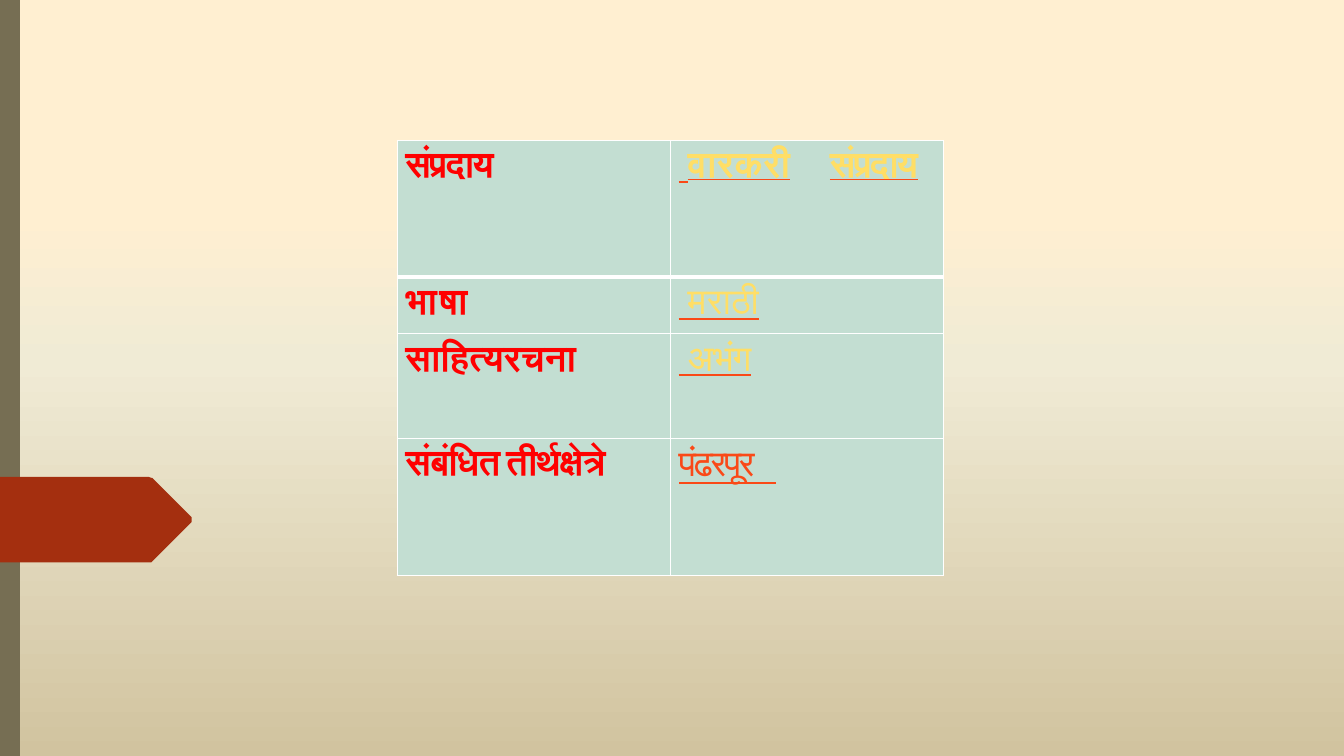
from lxml import etree
from pptx import Presentation
from pptx.dml.color import RGBColor
from pptx.oxml.ns import qn
from pptx.util import Inches, Pt

BACKDROP = [(28, "FFEFD1"), (48, "F0EBD5"), (100, "D1C39F")]
RED, YELLOW, ORANGE = "FF0000", "FFDE66", "FA4917"
MINT, WHITE = "C3DED2", "FFFFFF"
HEAD, BODY, SPACER = "Karla", "Roboto", "Times New Roman"
LEAD = (" ", SPACER, YELLOW, False, -6.2, True)
ROWS = [
    (1.36, [("संप्रदाय", HEAD, RED, True, -1.7, False)],
     [LEAD, ("वारकरी", HEAD, YELLOW, True, 0.1, True),
      ("\t", HEAD, YELLOW, True, 0.1, False),
      ("संप्रदाय", HEAD, YELLOW, True, -1.7, True)]),
    (0.56, [("भाषा", HEAD, RED, True, 1.4, False)],
     [LEAD, ("मराठी", BODY, YELLOW, False, 0.3, True)]),
    (1.04, [("साहित्यरचना", HEAD, RED, True, -0.2, False)],
     [LEAD, ("अभंग", BODY, YELLOW, False, -0.8, True)]),
    (1.36, [("संबंधित\tतीर्थक्षेत्रे", HEAD, RED, True, -0.7, False)],
     [("पंढरपूर", BODY, ORANGE, False, -1.8, False)]),
]
TABS = {(0, 1): 1.29, (3, 0): 1.35}
TABLE_LEFT, TABLE_TOP, COL_W = 3.94, 1.39, 2.71
SIDE_BAR = [(0, 0), (0.2, 0), (0.2, 7.5), (0, 7.5)]
ARROW = [(0, 4.73), (1.47, 4.73), (1.5, 4.74), (1.51, 4.74), (1.9, 5.13),
         (1.9, 5.18), (1.51, 5.57), (1.5, 5.58), (1.47, 5.58), (0, 5.58)]
UNDERLINE = [(6.73, 4.78), (7.7, 4.78), (7.7, 4.8), (6.73, 4.8)]


def rgb(value):
    return RGBColor.from_string(value)


def node(parent, tag, **attrs):
    return etree.SubElement(parent, qn(tag), {k: str(v) for k, v in attrs.items()})


def solid(parent, color):
    node(node(parent, "a:solidFill"), "a:srgbClr", val=color)


def set_backdrop(s):
    s.background.fill.solid()
    bg_pr = s.background.fill._xPr
    bg_pr.remove(bg_pr[0])
    grad = etree.Element(qn("a:gradFill"), rotWithShape="1")
    bg_pr.insert(0, grad)
    stops = node(grad, "a:gsLst")
    for pos, color in BACKDROP:
        node(node(stops, "a:gs", pos=pos * 1000), "a:srgbClr", val=color)
    node(grad, "a:lin", ang=5400000, scaled=0)


def add_outline(s, points, color):
    pts = [(Inches(x), Inches(y)) for x, y in points]
    fb = s.shapes.build_freeform(*pts[0])
    fb.add_line_segments(pts[1:], close=True)
    sp = fb.convert_to_shape()
    sp.shadow.inherit = False
    sp.fill.solid()
    sp.fill.fore_color.rgb = rgb(color)
    sp.line.fill.background()


def add_run(p, text, font, color, bold, spacing, underline):
    r = p.add_run()
    r.text = text
    r.font.size = Pt(26)
    r.font.bold = bold
    r.font.color.rgb = rgb(color)
    r.font.name = font
    r_pr = r.font._element
    r_pr.set("spc", str(round(spacing * 100)))
    node(r_pr, "a:cs", typeface=font)
    if underline:
        r.font.underline = True
        u_fill = etree.Element(qn("a:uFill"))
        solid(u_fill, ORANGE)
        r_pr.find(qn("a:latin")).addprevious(u_fill)


def set_borders(cell, row):
    tc_pr = cell._tc.get_or_add_tcPr()
    for i, side in enumerate("LRTB"):
        thick = (row, side) in [(0, "B"), (1, "T")]
        ln = etree.Element(qn("a:ln" + side), w=str(Pt(3 if thick else 1)))
        solid(ln, WHITE)
        tc_pr.insert(i, ln)


def fill_cell(cell, row, col, runs):
    cell.margin_left = cell.margin_right = cell.margin_bottom = 0
    cell.margin_top = Inches(0.04)
    cell.fill.solid()
    cell.fill.fore_color.rgb = rgb(MINT)
    set_borders(cell, row)
    p = cell.text_frame.paragraphs[0]
    p_pr = p._p.get_or_add_pPr()
    p_pr.set("marL", str(Inches(0.08)))
    p_pr.set("indent", "0")
    if (row, col) in TABS:
        tabs = node(p_pr, "a:tabLst")
        node(tabs, "a:tab", pos=Inches(TABS[row, col]), algn="l")
    for run in runs:
        add_run(p, *run)


def add_facts(s):
    height = sum(row[0] for row in ROWS)
    table = s.shapes.add_table(len(ROWS), 2, Inches(TABLE_LEFT), Inches(TABLE_TOP),
                               Inches(2 * COL_W), Inches(height)).table
    table.first_row = table.horz_banding = False
    for column in table.columns:
        column.width = Inches(COL_W)
    for i, (row_h, *cells) in enumerate(ROWS):
        table.rows[i].height = Inches(row_h)
        for j, runs in enumerate(cells):
            fill_cell(table.cell(i, j), i, j, runs)


def main():
    prs = Presentation()
    prs.slide_width, prs.slide_height = Inches(13.33), Inches(7.5)
    s = prs.slides.add_slide(prs.slide_layouts[6])
    set_backdrop(s)
    add_outline(s, SIDE_BAR, "766E53")
    add_outline(s, ARROW, "A42F0F")
    add_facts(s)
    add_outline(s, UNDERLINE, ORANGE)
    prs.save("out.pptx")


if __name__ == "__main__":
    main()
